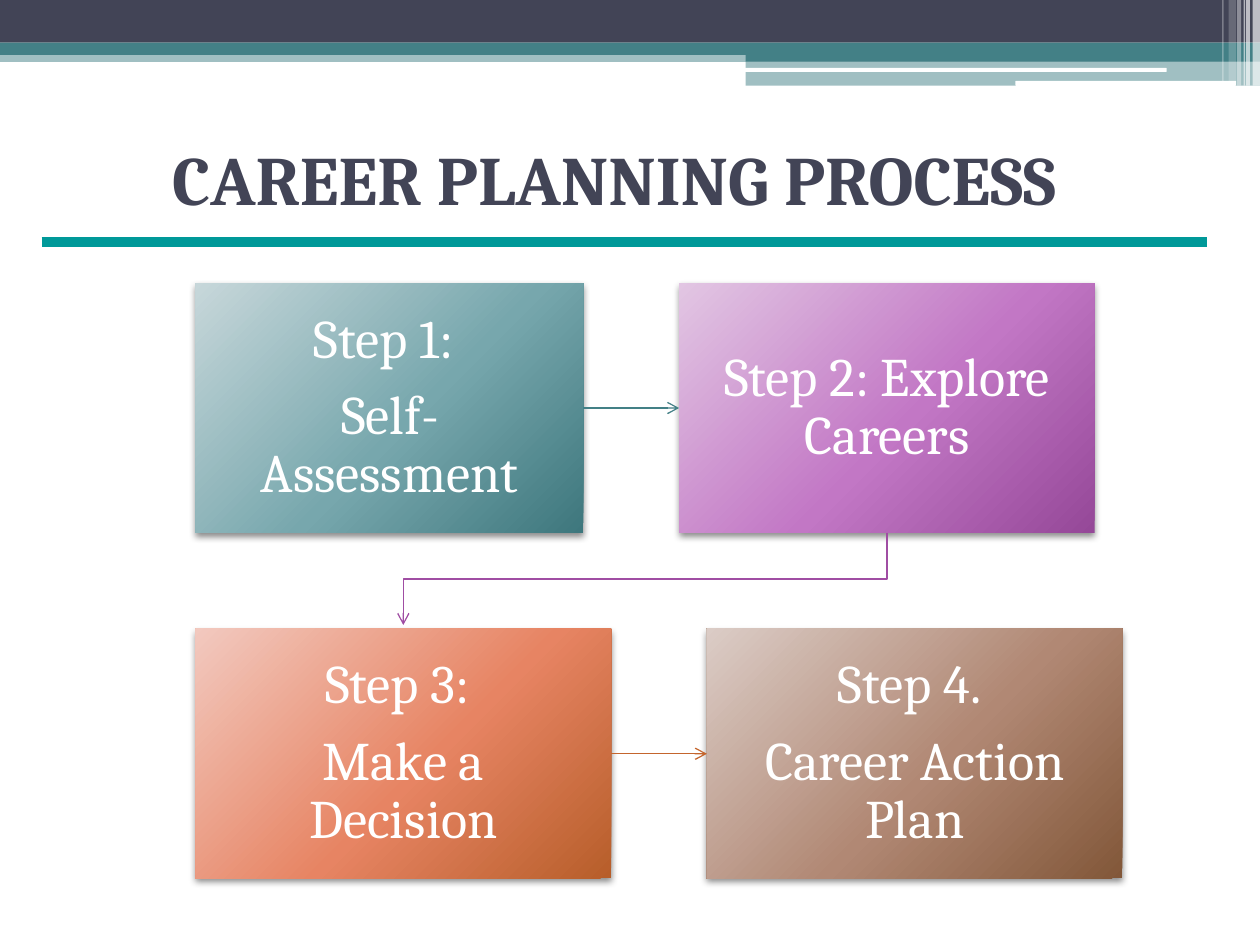
from lxml.etree import SubElement
from pptx import Presentation
from pptx.dml.color import RGBColor
from pptx.enum.shapes import MSO_CONNECTOR, MSO_SHAPE
from pptx.enum.text import MSO_ANCHOR, MSO_AUTO_SIZE, PP_ALIGN
from pptx.oxml import parse_xml
from pptx.oxml.ns import nsdecls, qn
from pptx.util import Cm, Pt

COLORS = {
    "dark": "424456", "teal": "438086", "white": "FFFFFF", "rule": "009999",
    "purple": "A04DA3", "orange": "C4652D", "black": "000000",
}
GRADIENTS = {
    "teal": ("C7D7DA", "77A7AD", "3E777D"),
    "purple": ("E2C6E3", "C277C5", "954898"),
    "orange": ("F2C9BF", "E78463", "B75E2A"),
    "brown": ("DBCCC6", "B18874", "825739"),
}
TITLE_FONT = {"name": "Cambria", "size": Pt(39.6), "bold": True}
STEP_FONT = {"name": "Cambria", "size": Pt(31), "bold": False}
STEP_PARAGRAPH = {"alignment": PP_ALIGN.CENTER, "line_spacing": 0.9, "space_after": Pt(10)}
STEP_MARGIN = 0.61
RIGHT, LEFT = 3, 1


def apply(target, values):
    for name, value in values.items():
        setattr(target, name, value)


class SlideBuilder:
    def __init__(self, presentation):
        self.slide = presentation.slides.add_slide(presentation.slide_layouts[5])
        self.shapes = self.slide.shapes

    def color(self, name):
        return RGBColor.from_string(COLORS[name])

    def title(self, text, left, top, width, height):
        shape = self.shapes.title
        apply(shape, {"left": Cm(left), "top": Cm(top), "width": Cm(width), "height": Cm(height)})
        frame = shape.text_frame
        apply(frame, {"auto_size": MSO_AUTO_SIZE.NONE, "word_wrap": True,
                      "vertical_anchor": MSO_ANCHOR.BOTTOM, "margin_bottom": 0})
        paragraph = frame.paragraphs[0]
        paragraph.text = text
        paragraph.alignment = PP_ALIGN.CENTER
        apply(paragraph.font, TITLE_FONT)
        paragraph.font.color.rgb = self.color("dark")

    def band(self, left, top, width, height, color, opacity=100, kind=MSO_SHAPE.RECTANGLE):
        shape = self.shapes.add_shape(kind, Cm(left), Cm(top), Cm(width), Cm(height))
        shape.shadow.inherit = False
        shape.line.fill.background()
        shape.fill.solid()
        shape.fill.fore_color.rgb = self.color(color)
        if opacity < 100:
            fill_color = shape.fill._xPr.find(qn("a:solidFill"))[0]
            SubElement(fill_color, qn("a:alpha"), val=str(opacity * 1000))

    def step(self, lines, gradient, left, top, width, height):
        shape = self.shapes.add_shape(
            MSO_SHAPE.RECTANGLE, Cm(left), Cm(top), Cm(width), Cm(height))
        shape.line.fill.background()
        self.fill_gradient(shape, GRADIENTS[gradient])
        self.drop_shadow(shape)
        frame = shape.text_frame
        apply(frame, {"word_wrap": True, "vertical_anchor": MSO_ANCHOR.MIDDLE})
        apply(frame, {f"margin_{side}": Cm(STEP_MARGIN)
                      for side in ("left", "top", "right", "bottom")})
        frame.text = "\n".join(lines)
        for paragraph in frame.paragraphs:
            apply(paragraph, STEP_PARAGRAPH)
            apply(paragraph.font, STEP_FONT)
            paragraph.font.color.rgb = self.color("white")
        return shape

    def fill_gradient(self, shape, colors):
        stops = "".join(
            f'<a:gs pos="{position * 1000}"><a:srgbClr val="{color}"/></a:gs>'
            for position, color in zip((0, 55, 100), colors))
        shape.fill.background()
        properties = shape._element.spPr
        properties.replace(properties.find(qn("a:noFill")), parse_xml(
            f'<a:gradFill {nsdecls("a")} rotWithShape="1"><a:gsLst>{stops}</a:gsLst>'
            '<a:path path="circle"><a:fillToRect l="-40000" t="-90000" r="140000" b="190000"/>'
            '</a:path></a:gradFill>'))

    def drop_shadow(self, shape):
        shape.shadow.inherit = False
        shape._element.spPr.find(qn("a:effectLst")).append(parse_xml(
            f'<a:outerShdw {nsdecls("a")} blurRad="{Pt(4)}" dist="{Pt(2)}" dir="5400000" '
            f'rotWithShape="0"><a:srgbClr val="{COLORS["black"]}"><a:alpha val="45000"/>'
            '</a:srgbClr></a:outerShdw>'))

    def line(self, start, end, color, width, arrow=False, kind=MSO_CONNECTOR.STRAIGHT):
        connector = self.shapes.add_connector(kind, *map(Cm, start + end))
        connector.line.color.rgb = self.color(color)
        connector.line.width = Pt(width)
        properties = connector._element.spPr
        if arrow:
            SubElement(properties.find(qn("a:ln")), qn("a:tailEnd"), type="arrow")
        SubElement(properties, qn("a:effectLst"))
        return connector

    def side_arrow(self, source, target, color):
        connector = self.line((0, 0), (1, 1), color, 0.75, arrow=True)
        connector.begin_connect(source, RIGHT)
        connector.end_connect(target, LEFT)

    def down_left_arrow(self, start, end, color):
        # A quarter turn makes the elbow leave and arrive vertically
        center_x, center_y = (start[0] + end[0]) / 2, (start[1] + end[1]) / 2
        half_run, half_drop = (start[0] - end[0]) / 2, (end[1] - start[1]) / 2
        connector = self.line(
            (center_x - half_drop, center_y - half_run),
            (center_x + half_drop, center_y + half_run),
            color, 0.75, arrow=True, kind=MSO_CONNECTOR.ELBOW)
        connector._element.spPr.find(qn("a:xfrm")).set("rot", "5400000")


def main():
    presentation = Presentation()
    presentation.slide_width, presentation.slide_height = Cm(25.4), Cm(19.05)
    builder = SlideBuilder(presentation)

    # Header bands
    for band in (
        (0, 1.02, 25.4, 0.23, "teal", 50),
        (0, 0, 25.4, 0.86, "dark"),
        (0, 0.86, 25.4, 0.25, "teal"),
        (15.03, 0.99, 10.37, 0.25, "teal"),
        (15.03, 1.23, 10.37, 0.5, "teal", 50),
    ):
        builder.band(*band)
    for left, top, width, height in ((15.01, 1.37, 8.51, 0.08), (20.47, 1.63, 4.45, 0.1)):
        builder.band(left, top, width, height, "white", kind=MSO_SHAPE.ROUNDED_RECTANGLE)

    # Header stripes at the right edge
    for left, width, height, opacity in (
        (25.25, 0.15, 1.73, 65), (25.12, 0.08, 1.73, 65), (25.07, 0.03, 1.73, 60),
        (24.94, 0.08, 1.73, 40), (24.77, 0.15, 1.63, 20), (24.64, 0.03, 1.63, 30),
    ):
        builder.band(left, 0, width, height, "white", opacity)

    # Title and rule
    builder.title("CAREER PLANNING PROCESS ", 0.84, 1.47, 23.39, 2.95)
    builder.line((0.84, 4.88), (24.33, 4.88), "rule", 6)

    # Steps, two to a row
    left, top, height, gap, row_step = 3.94, 5.71, 5.03, 1.93, 6.97
    narrow, wide = 7.82, 8.38
    rows = (
        (narrow, (("Step 1: ", "Self-Assessment"), "teal"),
         (("Step 2: Explore Careers",), "purple")),
        (wide, (("Step 3: ", "Make a Decision"), "orange"),
         (("Step 4. ", "Career Action Plan"), "brown")),
    )
    for row, (first_width, first, second) in enumerate(rows):
        row_top = top + row * row_step
        source = builder.step(*first, left, row_top, first_width, height)
        target = builder.step(*second, left + first_width + gap, row_top, wide, height)
        builder.side_arrow(source, target, first[1])

    # Arrow from step 2 down to step 3
    builder.down_left_arrow(
        (left + narrow + gap + wide / 2, top + height),
        (left + wide / 2, top + row_step - 0.08), "purple")

    presentation.save("out.pptx")


if __name__ == "__main__":
    main()
